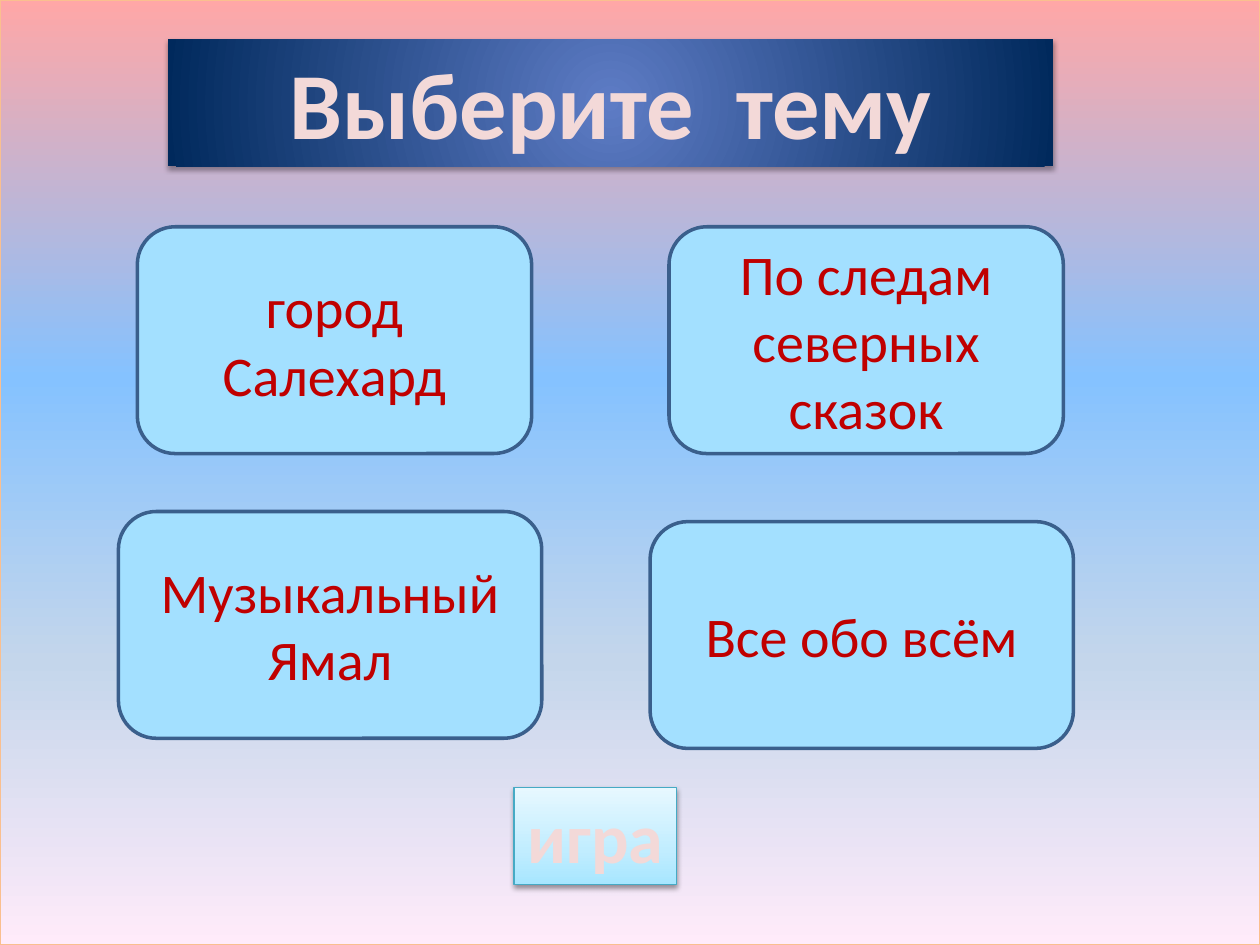
from typing import NamedTuple, Optional

from lxml import etree
from pptx import Presentation
from pptx.dml.color import RGBColor
from pptx.enum import shapes, text
from pptx.oxml.ns import qn
from pptx.util import Inches, Pt

SKY = RGBColor(0xA3, 0xE0, 0xFF)
STEEL = RGBColor(0x3A, 0x5F, 0x8C)
RED = RGBColor(0xC0, 0x00, 0x00)
BLUSH = RGBColor(0xF3, 0xD9, 0xD8)
PEACH = RGBColor(0xFA, 0xBF, 0x8F)
TEAL = RGBColor(0x46, 0xAA, 0xC5)
BLACK = RGBColor(0, 0, 0)
BROWN = RGBColor(0x97, 0x47, 0x06)


class Stop(NamedTuple):
    percent: int
    color: RGBColor


class Shadow(NamedTuple):
    color: RGBColor
    opacity: int
    blur: float
    distance: float
    angle: int


class Topic(NamedTuple):
    left: float
    top: float
    width: float
    lines: list[str]


DUSK = [Stop(40, RGBColor(0x85, 0xC2, 0xFF)), Stop(70, RGBColor(0xC4, 0xD6, 0xEB)),
        Stop(100, RGBColor(0xFF, 0xEB, 0xFA))]
BACKDROP = [Stop(0, RGBColor(0xFF, 0xB7, 0xB7)), *DUSK]
PANEL = [Stop(0, RGBColor(0xFF, 0xA7, 0xA7)), *DUSK]
NAVY = [Stop(0, RGBColor(0x5E, 0x7C, 0xC5)), Stop(100, RGBColor(0x00, 0x29, 0x5C))]
ICE = [Stop(0, RGBColor(0xA7, 0xE6, 0xFF)), Stop(35, RGBColor(0xC1, 0xED, 0xFF)),
       Stop(100, RGBColor(0xE7, 0xF8, 0xFF))]

TOPIC_HEIGHT = 1.8
TOPICS = [
    Topic(1.09, 1.8, 3.13, ["город", "Салехард"]),
    Topic(5.31, 1.8, 3.13, ["По следам северных сказок"]),
    Topic(0.94, 4.06, 3.36, ["Музыкальный", "Ямал"]),
    Topic(5.16, 4.14, 3.36, ["Все обо всём"]),
]


def add_color(parent, color: RGBColor):
    return etree.SubElement(parent, qn("a:srgbClr"), val=str(color))


def set_gradient(owner, fill, stops: list[Stop], angle: Optional[int] = None) -> None:
    """Fill with a linear gradient, or a circular one when no angle is given."""
    fill.gradient()
    grad = owner.element.find(".//" + qn("a:gradFill"))
    for child in list(grad):
        grad.remove(child)
    stop_list = etree.SubElement(grad, qn("a:gsLst"))
    for stop in stops:
        add_color(etree.SubElement(stop_list, qn("a:gs"), pos=str(stop.percent * 1000)), stop.color)
    if angle is None:
        circle = etree.SubElement(grad, qn("a:path"), path="circle")
        etree.SubElement(circle, qn("a:fillToRect"), {side: "50000" for side in "ltrb"})
    else:
        etree.SubElement(grad, qn("a:lin"), ang=str(angle * 60000), scaled="0")


def set_shadow(shape, shadow: Shadow) -> None:
    effects = shape.element.spPr.find(qn("a:effectLst"))
    outer = etree.SubElement(
        effects, qn("a:outerShdw"), blurRad=str(Pt(shadow.blur)), dist=str(Pt(shadow.distance)),
        dir=str(shadow.angle * 60000), algn="ctr", rotWithShape="0")
    etree.SubElement(add_color(outer, shadow.color), qn("a:alpha"), val=str(shadow.opacity * 1000))


def add_box(slide, left: float, top: float, width: float, height: float, *,
            kind=shapes.MSO_SHAPE.RECTANGLE, line: Optional[RGBColor] = None,
            line_width: float = 1):
    box = slide.shapes.add_shape(kind, Inches(left), Inches(top), Inches(width), Inches(height))
    box.shadow.inherit = False
    if line is None:
        box.line.fill.background()
    else:
        box.line.color.rgb = line
        box.line.width = Pt(line_width)
    return box


def write(shape, lines: list[str], *, size: float, color: RGBColor, bold: bool = False,
          anchor=text.MSO_ANCHOR.MIDDLE, wrap: bool = True) -> None:
    frame = shape.text_frame
    frame.word_wrap = wrap
    frame.vertical_anchor = anchor
    frame.text = "\n".join(lines)
    for paragraph in frame.paragraphs:
        paragraph.alignment = text.PP_ALIGN.CENTER
        font = paragraph.runs[0].font
        font.name, font.size, font.bold = "Calibri", Pt(size), bold
        font.color.rgb = color


def add_topic(slide, topic: Topic) -> None:
    card = add_box(slide, topic.left, topic.top, topic.width, TOPIC_HEIGHT,
                   kind=shapes.MSO_SHAPE.ROUNDED_RECTANGLE, line=STEEL, line_width=2)
    card.fill.solid()
    card.fill.fore_color.rgb = SKY
    write(card, topic.lines, size=32, color=RED)


def main() -> None:
    prs = Presentation()
    prs.slide_width, prs.slide_height = Inches(10), Inches(7.5)
    slide = prs.slides.add_slide(prs.slide_layouts[6])
    set_gradient(slide, slide.background.fill, BACKDROP, 90)

    panel = add_box(slide, 0, 0, 10, 7.5, line=PEACH)
    set_gradient(panel, panel.fill, PANEL, 90)
    set_shadow(panel, Shadow(BROWN, 50, 0, 2.2, 63))

    title = add_box(slide, 1.33, 0.31, 7.03, 1.01)
    set_gradient(title, title.fill, NAVY)
    set_shadow(title, Shadow(BLACK, 35, 3.1, 1.8, 90))
    write(title, ["Выберите  тему"], size=54, color=BLUSH, bold=True, anchor=text.MSO_ANCHOR.TOP)

    for topic in TOPICS:
        add_topic(slide, topic)

    game = add_box(slide, 4.08, 6.25, 1.29, 0.77, line=TEAL, line_width=0.75)
    set_gradient(game, game.fill, ICE, 270)
    set_shadow(game, Shadow(BLACK, 38, 3.1, 1.6, 90))
    write(game, ["игра"], size=40, color=BLUSH, bold=True, anchor=text.MSO_ANCHOR.TOP, wrap=False)

    prs.save("out.pptx")


if __name__ == "__main__":
    main()
